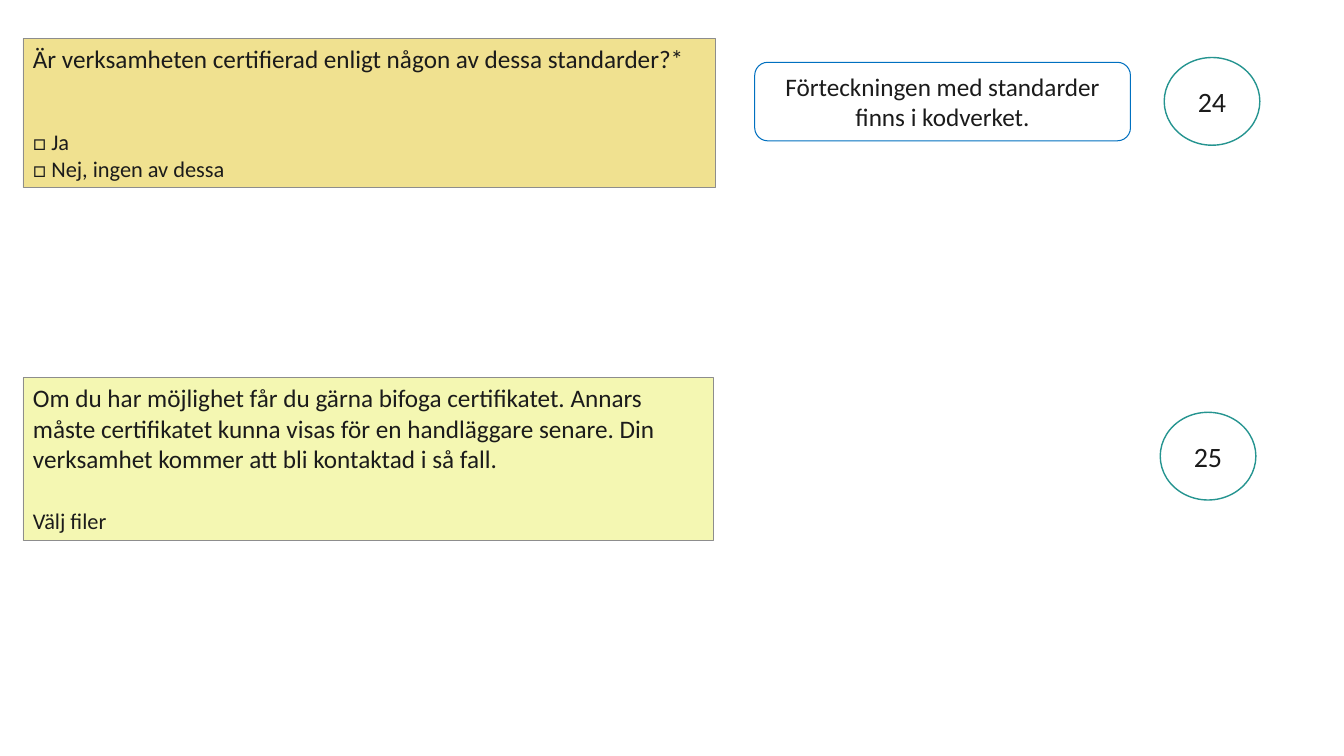
from pptx import Presentation
from pptx.dml.color import RGBColor
from pptx.enum import shapes as sh, text as tx
from pptx.util import Cm, Pt

# Content
HUES = {"text": "1B1B1B", "gold": "F0E190", "lime": "F4F7B2", "white": "FFFFFF",
        "gray": "8D8D8D", "teal": "259490", "blue": "0070C0"}

# Question boxes: place, fill, paragraphs (text, size, space before)
ASKS = [
    ((0.58, 9.52, 17.4, 4.11), "lime", [
        ("Om du har möjlighet får du gärna bifoga certifikatet. Annars måste "
         "certifikatet kunna visas för en handläggare senare. Din verksamhet "
         "kommer att bli kontaktad i så fall.", 18, 0),
        ("Välj filer", 16, 24.4)]),
    ((0.58, 0.97, 17.45, 3.76), "gold", [
        ("Är verksamheten certifierad enligt någon av dessa standarder?*", 18, 0),
        ("□ Ja", 16, 39),
        ("□ Nej, ingen av dessa", 16, 0)]),
]
NOTE = ((19.02, 1.57, 9.47, 1.98), "Förteckningen med standarder finns i kodverket.")
STEPS = [("24", 29.34, 1.45), ("25", 29.24, 10.39)]
DISC = (2.41, 2.21)

deck = Presentation()
deck.slide_width, deck.slide_height = Cm(33.87), Cm(19.05)
page = deck.slides.add_slide(deck.slide_layouts[6])


def hue(name):
    return RGBColor.from_string(HUES[name])


def add_box(kind, place, fill, line, width, paras, align, anchor):
    box = page.shapes.add_shape(kind, *map(Cm, place))
    box.shadow.inherit = False
    if fill:
        box.fill.solid()
        box.fill.fore_color.rgb = hue(fill)
    else:
        box.fill.background()
    box.line.color.rgb = hue(line)
    box.line.width = Pt(width)
    frame = box.text_frame
    frame.word_wrap = True
    frame.vertical_anchor = anchor
    for i, (words, size, gap) in enumerate(paras):
        para = frame.paragraphs[0] if i == 0 else frame.add_paragraph()
        para.text = words
        para.alignment = align
        if gap:
            para.space_before = Pt(gap)
        para.font.name = "Calibri"
        para.font.size = Pt(size)
        para.font.color.rgb = hue("text")
    return box


KIND, ALIGN, ANCHOR = sh.MSO_SHAPE, tx.PP_ALIGN, tx.MSO_ANCHOR

# Questions
for place, fill, paras in ASKS:
    add_box(KIND.RECTANGLE, place, fill, "gray", 0.5, paras, ALIGN.LEFT, ANCHOR.TOP)

# Note beside the first question
place, words = NOTE
add_box(KIND.ROUNDED_RECTANGLE, place, None, "blue", 0.75, [(words, 18, 0)],
        ALIGN.CENTER, ANCHOR.TOP)

# Step numbers
for num, left, top in STEPS:
    add_box(KIND.OVAL, (left, top, *DISC), "white", "teal", 1, [(num, 20, 0)],
            ALIGN.CENTER, ANCHOR.MIDDLE)

deck.save("out.pptx")
